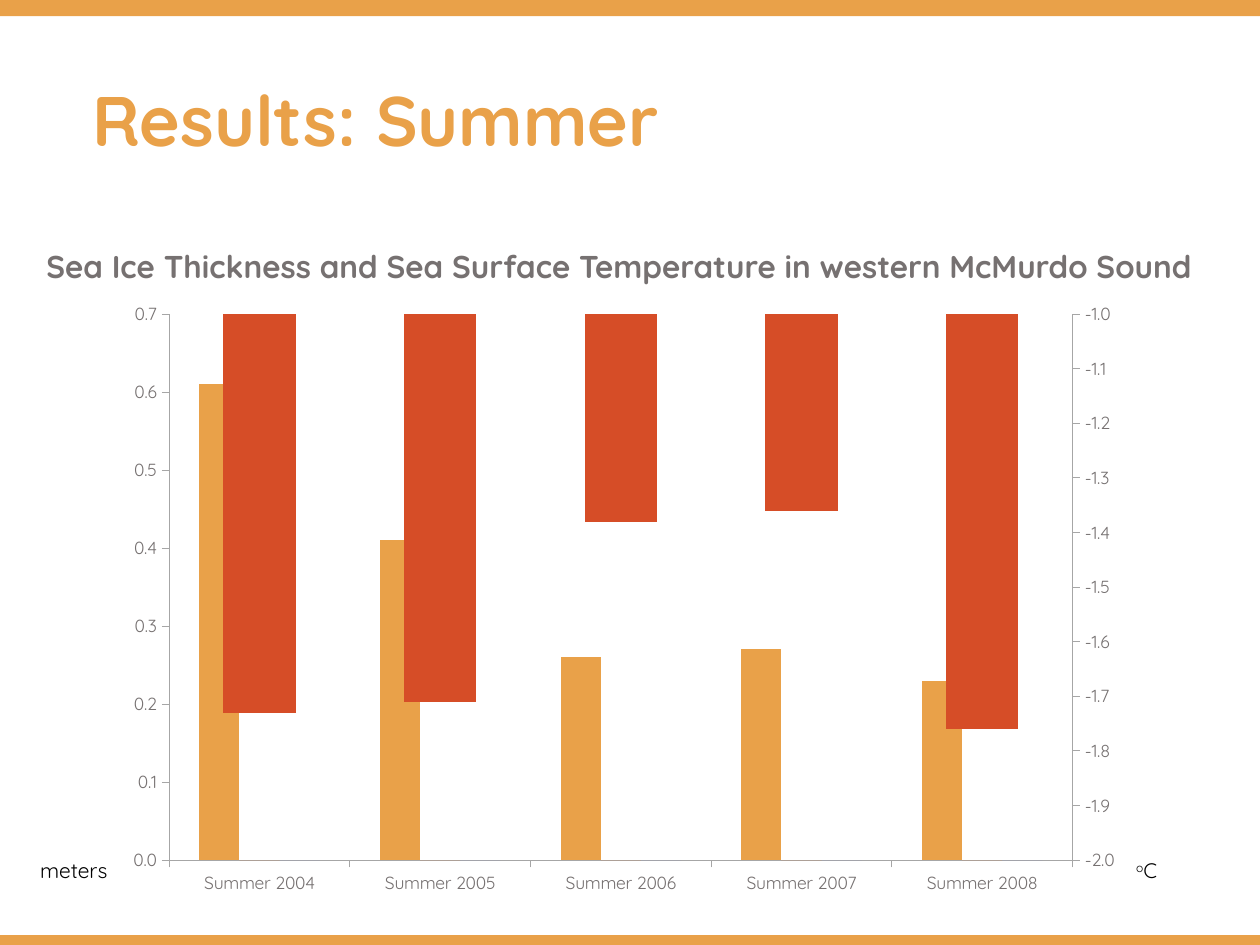
from copy import deepcopy

from lxml.etree import SubElement
from pptx import Presentation
from pptx.chart.axis import ValueAxis
from pptx.chart.data import CategoryChartData
from pptx.dml.color import RGBColor
from pptx.enum.chart import XL_CHART_TYPE, XL_TICK_MARK
from pptx.enum.shapes import MSO_SHAPE
from pptx.enum.text import MSO_ANCHOR, PP_ALIGN
from pptx.oxml import parse_xml
from pptx.oxml.ns import nsdecls, qn
from pptx.util import Pt

THEME = {
    "font": "Quicksand",
    "gold": "E9A149", "orange": "DF7934", "violet": "8D91C7", "red": "D64D27",
    "gray": "767171", "line": "A6A6A6", "black": "000000",
    "title": 40, "head": 18, "unit": 12, "axis": 10,
}
SIZE = (720, 540)
BANDS = [(0, 9.2), (534.4, 5.6)]  # top, height
TITLE = "Results: Summer"
TITLE_BOX = (45.4, 45.4, 628.6, 55.4)
# box, size, color, bold, runs as (text, raised)
NOTES = [
    ((19.4, 137.5, 676, 28.8), "head", "gray", True,
     [("Sea Ice Thickness and Sea Surface Temperature in western McMurdo Sound", False)]),
    ((15.8, 486.7, 58.3, 21.6), "unit", "black", False, [("meters", False)]),
    ((642.2, 486.7, 81.4, 21.6), "unit", "black", False, [("o", True), ("C", False)]),
]
CHART_BOX = (64.8, 166.3, 583.9, 351.4)
PLOT = {"x": 0.05, "y": 0.04, "w": 0.88, "h": 0.89}
PLOT.update(x=CHART_BOX[0] and (96.7 - CHART_BOX[0]) / CHART_BOX[2],
            y=(179.5 - CHART_BOX[1]) / CHART_BOX[3],
            w=516.2 / CHART_BOX[2], h=312 / CHART_BOX[3])
YEARS = range(2004, 2009)
SERIES = [
    ("Series 1", (0.61, 0.41, 0.26, 0.27, 0.23), "gold"),
    ("Series 2", (0, 0, 0, 0, 0), "orange"),
    ("Series 3", (0, 0, 0, 0, 0), "violet"),
    ("Series 4", (-1.73, -1.71, -1.38, -1.36, -1.76), "red"),
]
LEFT = 3  # number of series on the left axis


def color(name):
    return RGBColor.from_string(THEME[name])


def points(box):
    return [Pt(n) for n in box]


def style(font, size, tint, bold=False):
    font.name, font.size, font.bold = THEME["font"], Pt(THEME[size]), bold
    font.color.rgb = color(tint)


def add_band(slide, top, height):
    band = slide.shapes.add_shape(
        MSO_SHAPE.RECTANGLE, *points((0, top, SIZE[0], height)))
    band.shadow.inherit = False
    band.fill.solid()
    band.fill.fore_color.rgb = color("gold")
    band.line.fill.background()


def set_title(slide):
    title = slide.shapes.title
    title.left, title.top, title.width, title.height = points(TITLE_BOX)
    frame = title.text_frame
    frame.text = TITLE
    frame.vertical_anchor = MSO_ANCHOR.TOP
    para = frame.paragraphs[0]
    para.alignment = PP_ALIGN.LEFT
    para.line_spacing, para.space_before = 0.9, Pt(10)
    style(para.runs[0].font, "title", "gold", True)


def add_note(slide, box, size, tint, bold, runs):
    frame = slide.shapes.add_textbox(*points(box)).text_frame
    frame.word_wrap = True
    for text, raised in runs:
        run = frame.paragraphs[0].add_run()
        run.text = text
        style(run.font, size, tint, bold)
        if raised:
            run.font._element.set("baseline", "30000")


def scale(axis, low, high, form):
    axis.minimum_scale, axis.maximum_scale, axis.major_unit = low, high, 0.1
    axis.tick_labels.number_format = form
    axis.tick_labels.number_format_is_linked = False


def set_layout(area):
    for old in area.findall(qn("c:layout")):
        area.remove(old)
    layout = parse_xml(f"<c:layout {nsdecls('c')}><c:manualLayout/></c:layout>")
    marks = {"layoutTarget": "inner", "xMode": "edge", "yMode": "edge"}
    marks.update({key: f"{part:.4f}" for key, part in PLOT.items()})
    for key, mark in marks.items():
        SubElement(layout[0], qn(f"c:{key}")).set("val", mark)
    area.insert(0, layout)


def split_axes(area):
    """Move the series after LEFT to a second bar group on a right axis."""
    bars = area.find(qn("c:barChart"))
    twin = deepcopy(bars)
    for group, drop in ((bars, slice(LEFT, None)), (twin, slice(LEFT))):
        for ser in group.findall(qn("c:ser"))[drop]:
            group.remove(ser)
    bars.addnext(twin)

    cat, val = area.find(qn("c:catAx")), area.find(qn("c:valAx"))
    cat2, val2 = deepcopy(cat), deepcopy(val)
    val.addnext(val2)
    val2.addnext(cat2)
    ids = {cat.find(qn("c:axId")).get("val"): "5001",
           val.find(qn("c:axId")).get("val"): "5002"}
    for part in (twin, cat2, val2):
        for tag in ("c:axId", "c:crossAx"):
            for node in part.findall(qn(tag)):
                node.set("val", ids[node.get("val")])
    cat2.find(qn("c:delete")).set("val", "1")
    val2.find(qn("c:axPos")).set("val", "r")
    val2.find(qn("c:crosses")).set("val", "max")
    scale(ValueAxis(val2), -2, -1, "#,##0.0")


def add_chart(slide):
    data = CategoryChartData()
    data.categories = [f"Summer {year}" for year in YEARS]
    for name, vals, _ in SERIES:
        data.add_series(name, vals)
    chart = slide.shapes.add_chart(
        XL_CHART_TYPE.COLUMN_CLUSTERED, *points(CHART_BOX), data).chart
    chart.has_title = chart.has_legend = False
    style(chart.font, "axis", "gray")

    plot = chart.plots[0]
    plot.gap_width, plot.overlap, plot.vary_by_categories = 150, 0, False
    for ser, (_, _, tint) in zip(plot.series, SERIES):
        ser.invert_if_negative = False
        ser.format.fill.solid()
        ser.format.fill.fore_color.rgb = color(tint)

    for axis in (chart.category_axis, chart.value_axis):
        axis.has_major_gridlines = False
        axis.major_tick_mark = XL_TICK_MARK.OUTSIDE
        axis.minor_tick_mark = XL_TICK_MARK.NONE
        axis.format.line.color.rgb = color("line")
        axis.format.line.width = Pt(0.5)
        style(axis.tick_labels.font, "axis", "gray")
    scale(chart.value_axis, 0, 0.7, "0.0")

    area = chart.category_axis._element.getparent()
    split_axes(area)
    set_layout(area)


def main():
    deck = Presentation()
    deck.slide_width, deck.slide_height = points(SIZE)
    slide = deck.slides.add_slide(deck.slide_layouts[5])
    for band in BANDS:
        add_band(slide, *band)
    set_title(slide)
    add_chart(slide)
    for note in NOTES:
        add_note(slide, *note)
    deck.save("out.pptx")


if __name__ == "__main__":
    main()
